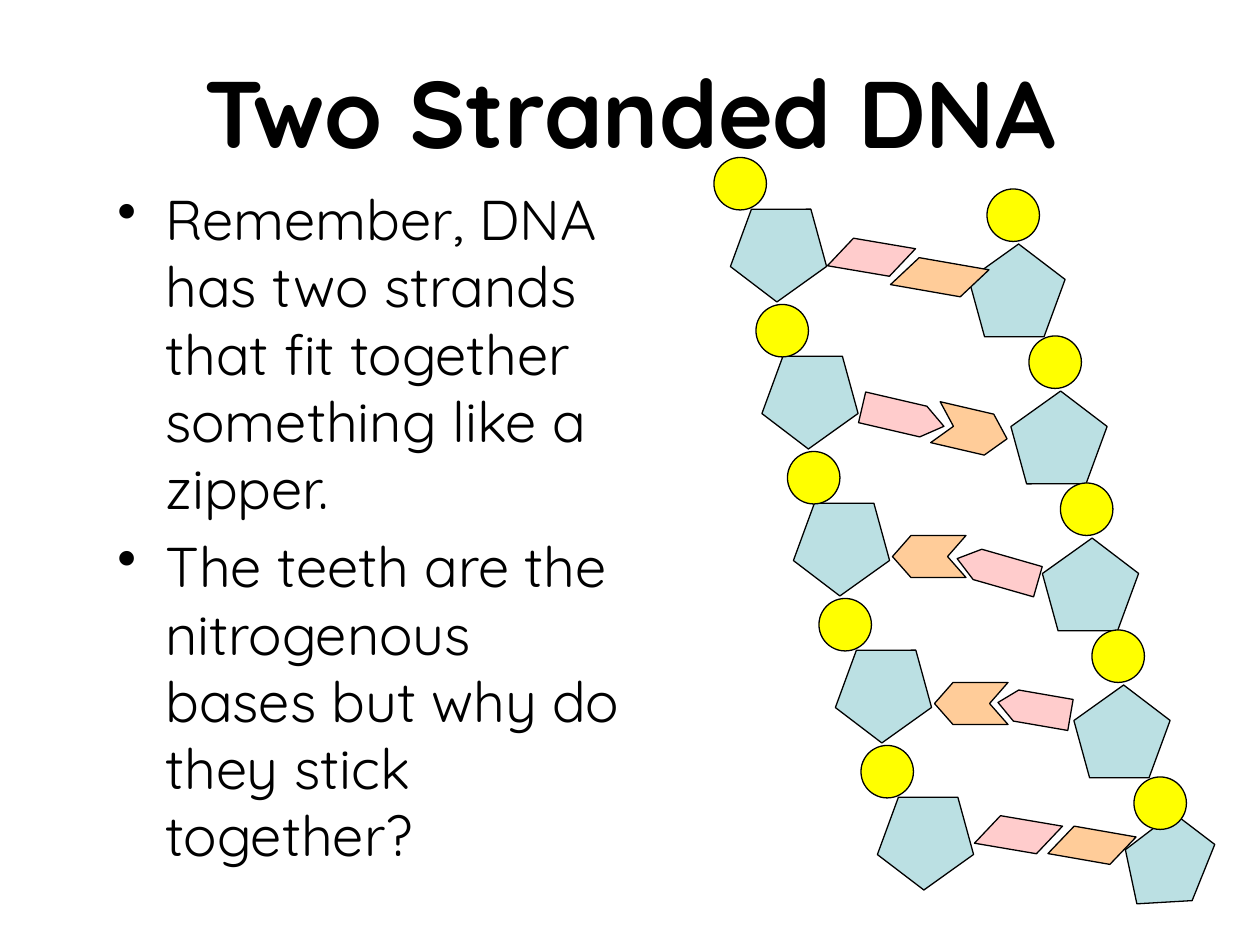
from lxml.etree import SubElement
from pptx import Presentation
from pptx.dml.color import RGBColor
from pptx.enum.shapes import MSO_SHAPE
from pptx.enum.text import MSO_ANCHOR, PP_ALIGN
from pptx.oxml.ns import qn
from pptx.util import Inches, Pt

BLACK = RGBColor(0x00, 0x00, 0x00)
SUGAR_BLUE = RGBColor(0xBB, 0xE0, 0xE3)
PHOSPHATE_YELLOW = RGBColor(0xFF, 0xFF, 0x00)
BASE_PINK = RGBColor(0xFF, 0xCC, 0xCC)
BASE_ORANGE = RGBColor(0xFF, 0xCC, 0x99)

FONT = "Quicksand"
CELL = Inches(1) // 12
ROW_STEP = 14

LEFT_SUGARS = (70, 73, 76, 80, 84)
LEFT_PHOSPHATES = (68, 72, 75, 78, 82)
RIGHT_SUGARS = (92, 96, 99, 102)
RIGHT_PHOSPHATES = (94, 98, 101, 104, 108)

# kind, colour, (column, row, columns, rows), rotation, adjustment
BASES = (
    (MSO_SHAPE.PARALLELOGRAM, BASE_PINK, (79, 23, 8, 3), 9.6, 0.67),
    (MSO_SHAPE.PARALLELOGRAM, BASE_ORANGE, (85, 24.9, 9, 3), 189.9, 0.75),
    (MSO_SHAPE.PENTAGON, BASE_PINK, (82, 38.2, 8, 3), 13.1, 0.67),
    (MSO_SHAPE.CHEVRON, BASE_ORANGE, (89, 39, 7, 4), 13.1, 0.44),
    (MSO_SHAPE.CHEVRON, BASE_ORANGE, (85, 51, 7, 4), 180, 0.44),
    (MSO_SHAPE.PENTAGON, BASE_PINK, (91, 52.8, 8, 3), 196, 0.67),
    (MSO_SHAPE.CHEVRON, BASE_ORANGE, (89, 65, 7, 4), 180, 0.44),
    (MSO_SHAPE.PENTAGON, BASE_PINK, (95, 66, 7, 3), 189.8, 0.58),
    (MSO_SHAPE.PARALLELOGRAM, BASE_PINK, (93, 78, 8, 3), 9.6, 0.67),
    (MSO_SHAPE.PARALLELOGRAM, BASE_ORANGE, (100, 79, 8, 3), 189.9, 0.67),
)


def grid_box(column, row, columns, rows):
    return [round(CELL * cells) for cells in (column, row, columns, rows)]


def add_bullet(paragraph):
    properties = paragraph._p.get_or_add_pPr()
    properties.set("marL", str(Inches(0.38)))
    properties.set("indent", str(-Inches(0.38)))
    SubElement(properties, qn("a:buChar"), char="•")


def add_text(slide, box, paragraphs, size, bold=False, bulleted=False,
             align=PP_ALIGN.LEFT, anchor=MSO_ANCHOR.TOP, gap=0):
    frame = slide.shapes.add_textbox(*grid_box(*box)).text_frame
    frame.word_wrap = True
    frame.vertical_anchor = anchor
    for index, text in enumerate(paragraphs):
        paragraph = frame.add_paragraph() if index else frame.paragraphs[0]
        if bulleted:
            add_bullet(paragraph)
        paragraph.alignment = align
        if index:
            paragraph.space_before = Pt(gap)
        run = paragraph.add_run()
        run.text = text
        run.font.name = FONT
        run.font.size = Pt(size)
        run.font.bold = bold
        run.font.color.rgb = BLACK


def add_molecule(slide, kind, color, box, rotation=0, adjustment=None):
    shape = slide.shapes.add_shape(kind, *grid_box(*box))
    shape.shadow.inherit = False
    shape.rotation = rotation
    shape.fill.solid()
    shape.fill.fore_color.rgb = color
    shape.line.color.rgb = BLACK
    shape.line.width = Pt(0.75)
    if adjustment is not None:
        shape.adjustments[0] = adjustment


def add_column(slide, kind, color, columns, first_row, size, rotation=0):
    """Stack one molecule per rung, each at its own column."""
    for rung, column in enumerate(columns):
        box = (column, first_row + rung * ROW_STEP, size, size)
        add_molecule(slide, kind, color, box, rotation)


def add_backbones(slide):
    sugar = (MSO_SHAPE.REGULAR_PENTAGON, SUGAR_BLUE)
    phosphate = (MSO_SHAPE.OVAL, PHOSPHATE_YELLOW)
    add_column(slide, *sugar, LEFT_SUGARS, 19, 9, 37.3)
    add_column(slide, *phosphate, LEFT_PHOSPHATES, 15, 5)
    add_column(slide, *sugar, RIGHT_SUGARS, 24, 9, 217.3)
    add_molecule(slide, *sugar, (107, 78, 8, 9), 217.3)
    add_column(slide, *phosphate, RIGHT_PHOSPHATES, 18, 5)


def main():
    presentation = Presentation()
    presentation.slide_width = Inches(10)
    presentation.slide_height = Inches(7.5)
    slide = presentation.slides.add_slide(presentation.slide_layouts[6])
    add_text(slide, (9, 3, 102, 15), ["Two Stranded DNA"], 54, bold=True,
             align=PP_ALIGN.CENTER, anchor=MSO_ANCHOR.MIDDLE)
    add_text(slide, (10, 17, 51, 70), [
        "Remember, DNA has two strands that fit together something like a zipper.",
        "The teeth are the nitrogenous bases but why do they stick together?",
    ], 32, bulleted=True, gap=6.4)
    add_backbones(slide)
    for base in BASES:
        add_molecule(slide, *base)
    presentation.save("out.pptx")


if __name__ == "__main__":
    main()
